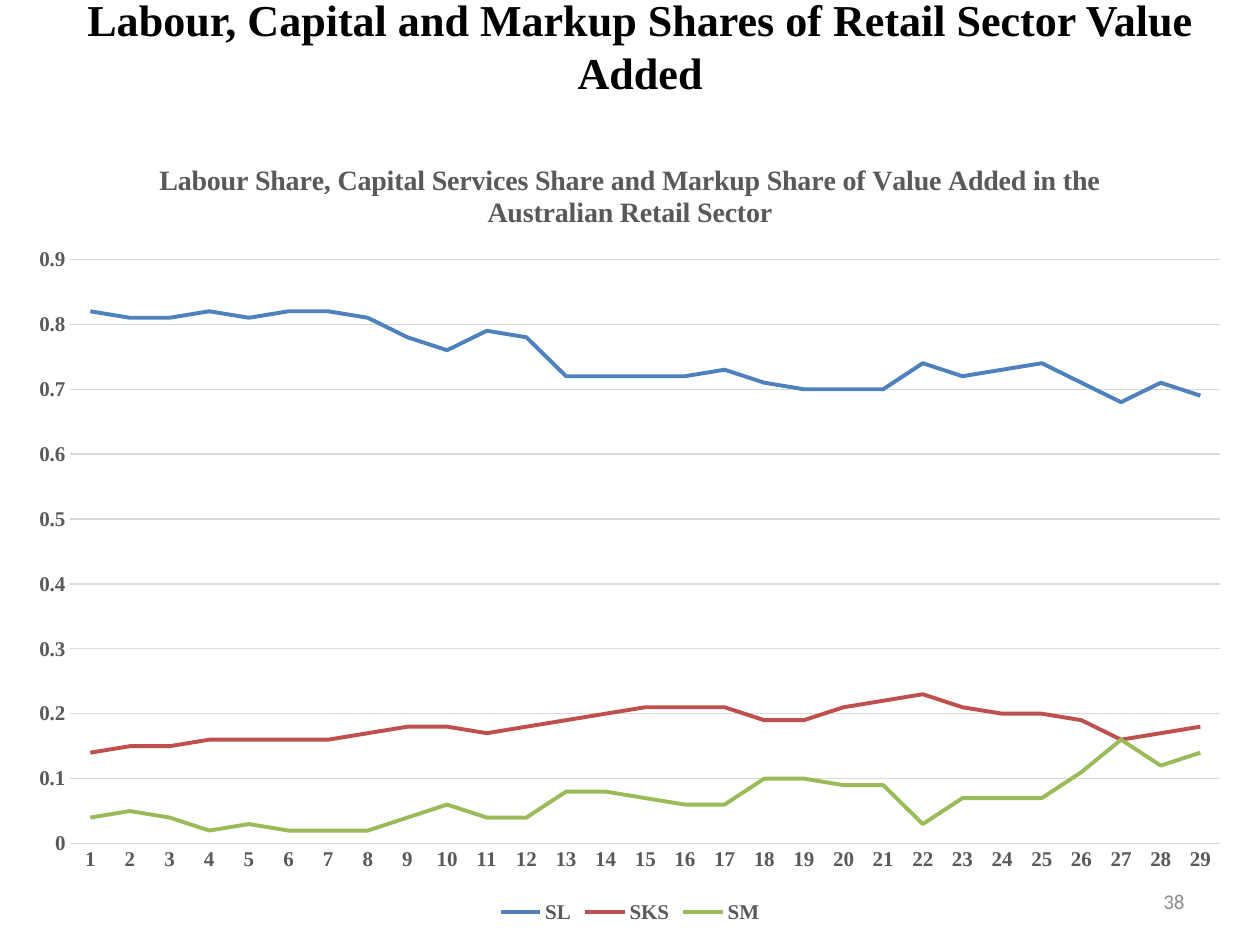
from dataclasses import dataclass

from lxml import etree
from pptx import Presentation
from pptx.chart.data import CategoryChartData
from pptx.dml.color import RGBColor
from pptx.enum.chart import XL_CHART_TYPE, XL_LEGEND_POSITION, XL_TICK_MARK
from pptx.enum.text import MSO_ANCHOR, PP_ALIGN
from pptx.oxml.ns import qn
from pptx.util import Inches, Pt

LINE_CHART = XL_CHART_TYPE.LINE
LEGEND_BOTTOM = XL_LEGEND_POSITION.BOTTOM
NO_TICK = XL_TICK_MARK.NONE
MIDDLE = MSO_ANCHOR.MIDDLE
CENTER, RIGHT = PP_ALIGN.CENTER, PP_ALIGN.RIGHT

SHARES = {
    "SL": [0.82, 0.81, 0.81, 0.82, 0.81, 0.82, 0.82, 0.81, 0.78, 0.76,
           0.79, 0.78, 0.72, 0.72, 0.72, 0.72, 0.73, 0.71, 0.7, 0.7,
           0.7, 0.74, 0.72, 0.73, 0.74, 0.71, 0.68, 0.71, 0.69],
    "SKS": [0.14, 0.15, 0.15, 0.16, 0.16, 0.16, 0.16, 0.17, 0.18, 0.18,
            0.17, 0.18, 0.19, 0.2, 0.21, 0.21, 0.21, 0.19, 0.19, 0.21,
            0.22, 0.23, 0.21, 0.2, 0.2, 0.19, 0.16, 0.17, 0.18],
    "SM": [0.04, 0.05, 0.04, 0.02, 0.03, 0.02, 0.02, 0.02, 0.04, 0.06,
           0.04, 0.04, 0.08, 0.08, 0.07, 0.06, 0.06, 0.1, 0.1, 0.09,
           0.09, 0.03, 0.07, 0.07, 0.07, 0.11, 0.16, 0.12, 0.14],
}


@dataclass(frozen=True)
class Theme:
    heading_font: str = "Times New Roman"
    body_font: str = "Calibri"
    title_size: float = 25.2
    chart_title_size: float = 16
    label_size: float = 12
    title_color: str = "000000"
    label_color: str = "595959"
    number_color: str = "8C8C8C"
    grid_color: str = "D9D9D9"
    series_colors: tuple = ("4F81BD", "C0504D", "9BBB59")
    grid_width: float = 0.75
    series_width: float = 2.25


def format_font(font, *, name, size, color, bold=False):
    font.name = name
    font.size = Pt(size)
    font.bold = bold
    font.color.rgb = RGBColor.from_string(color)


def write_text(text_frame, text, *, align=CENTER, **font_format):
    paragraph = text_frame.paragraphs[0]
    paragraph.alignment = align
    run = paragraph.add_run()
    run.text = text
    format_font(run.font, **font_format)


def format_line(line, color, width):
    line.color.rgb = RGBColor.from_string(color)
    line.width = Pt(width)


def fix_plot_area(chart, **fractions):
    """Place the inner plot area by fractions of the chart's size."""
    plot_area = chart.plots[0]._element.getparent()
    for old_layout in plot_area.findall(qn("c:layout")):
        plot_area.remove(old_layout)
    layout = etree.Element(qn("c:layout"))
    plot_area.insert(0, layout)
    manual = etree.SubElement(layout, qn("c:manualLayout"))
    settings = {"layoutTarget": "inner", "xMode": "edge", "yMode": "edge", **fractions}
    for tag, value in settings.items():
        etree.SubElement(manual, qn(f"c:{tag}")).set("val", str(value))


class SlideBuilder:
    def __init__(self, slide, theme):
        self.slide = slide
        self.theme = theme

    def text_box(self, text, left, top, width, height, **text_format):
        shape = self.slide.shapes.add_textbox(
            Inches(left), Inches(top), Inches(width), Inches(height))
        shape.text_frame.word_wrap = True
        shape.text_frame.vertical_anchor = MIDDLE
        write_text(shape.text_frame, text, **text_format)

    def line_chart(self, title, series_values, left, top, width, height):
        theme = self.theme
        chart_data = CategoryChartData()
        count = len(next(iter(series_values.values())))
        chart_data.categories = [str(number) for number in range(1, count + 1)]
        for name, values in series_values.items():
            chart_data.add_series(name, values)
        chart = self.slide.shapes.add_chart(
            LINE_CHART, Inches(left), Inches(top), Inches(width), Inches(height),
            chart_data).chart

        label_format = dict(name=theme.heading_font, color=theme.label_color, bold=True)
        format_font(chart.font, size=theme.label_size, **label_format)
        chart.has_title = True
        write_text(chart.chart_title.text_frame, title,
                   size=theme.chart_title_size, **label_format)
        chart.chart_title.include_in_layout = False
        chart.has_legend = True
        chart.legend.position = LEGEND_BOTTOM
        chart.legend.include_in_layout = False
        format_font(chart.legend.font, size=theme.label_size, **label_format)

        for axis in (chart.category_axis, chart.value_axis):
            axis.major_tick_mark = axis.minor_tick_mark = NO_TICK
            format_font(axis.tick_labels.font, size=theme.label_size, **label_format)
        format_line(chart.category_axis.format.line, theme.grid_color, theme.grid_width)
        value_axis = chart.value_axis
        value_axis.minimum_scale, value_axis.maximum_scale = 0, 0.9
        value_axis.major_unit = 0.1
        value_axis.format.line.fill.background()
        value_axis.has_major_gridlines = True
        format_line(value_axis.major_gridlines.format.line,
                    theme.grid_color, theme.grid_width)

        plot = chart.plots[0]
        plot.vary_by_categories = False
        for series, color in zip(plot.series, theme.series_colors):
            series.smooth = False
            format_line(series.format.line, color, theme.series_width)
        fix_plot_area(chart, x=0.045, y=0.157, w=0.935, h=0.736)


def main():
    presentation = Presentation()
    presentation.slide_width = Inches(10)
    presentation.slide_height = Inches(7.5)
    theme = Theme()
    slide = presentation.slides.add_slide(presentation.slide_layouts[6])
    builder = SlideBuilder(slide, theme)

    builder.text_box(
        "Labour, Capital and Markup Shares of Retail Sector Value Added",
        0.14, -0.11, 9.88, 0.94,
        name=theme.heading_font, size=theme.title_size,
        color=theme.title_color, bold=True)
    builder.text_box(
        "38", 7.17, 6.95, 2.33, 0.4, align=RIGHT,
        name=theme.body_font, size=theme.label_size, color=theme.number_color)
    builder.line_chart(
        "Labour Share, Capital Services Share and Markup Share of Value Added "
        "in the Australian Retail Sector",
        SHARES, 0.12, 1.07, 9.76, 6.3)

    presentation.save("out.pptx")


if __name__ == "__main__":
    main()
